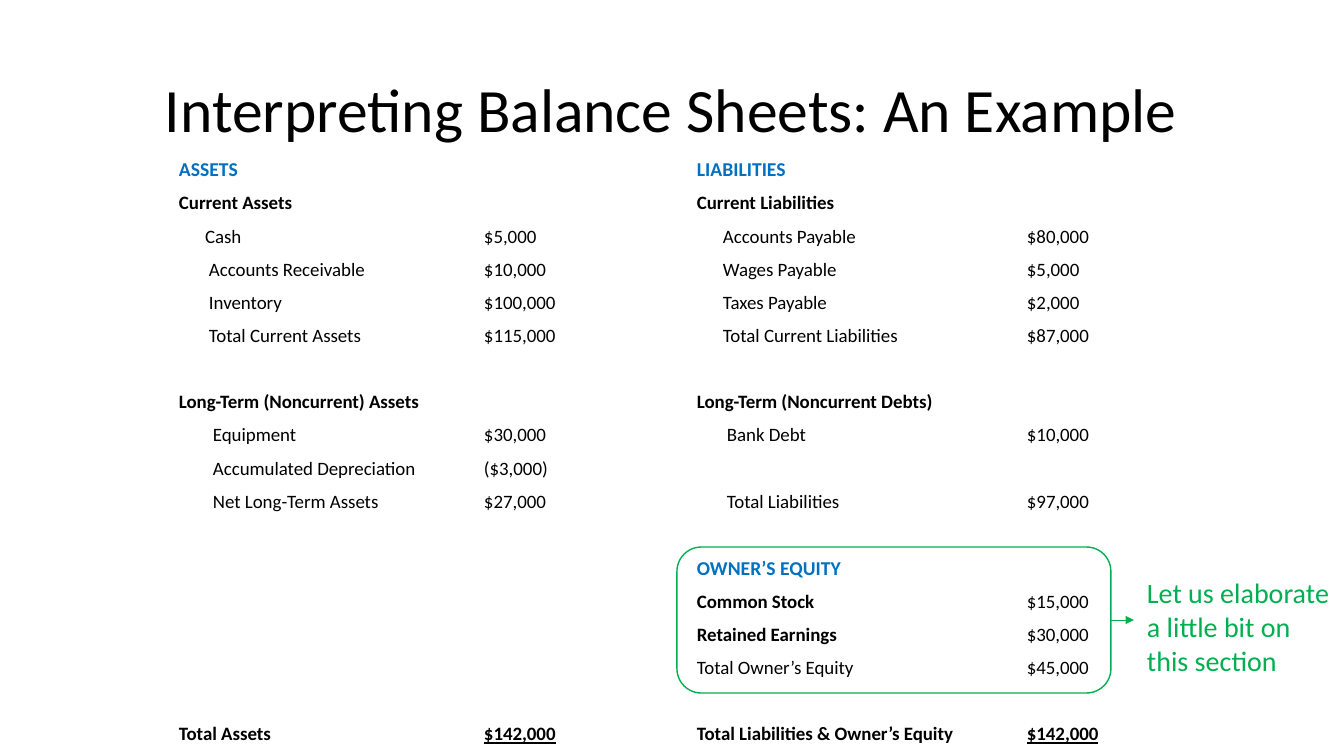
"""Build a slide that explains a balance sheet."""
from dataclasses import dataclass

from lxml import etree
from pptx import Presentation
from pptx.dml.color import RGBColor
from pptx.enum.shapes import MSO_CONNECTOR, MSO_SHAPE
from pptx.enum.text import MSO_ANCHOR, PP_ALIGN
from pptx.oxml.ns import qn
from pptx.util import Pt

STRAIGHT = MSO_CONNECTOR.STRAIGHT
ROUND = MSO_SHAPE.ROUNDED_RECTANGLE
MIDDLE = MSO_ANCHOR.MIDDLE
CENTER = PP_ALIGN.CENTER
RIGHT = 3
SCALE = 914400 / 100.8
PAD = 10


@dataclass(frozen=True)
class Theme:
    """Hold the font, colours and type sizes."""
    font: str = "Calibri"
    ink: str = "000000"
    blue: str = "0070C0"
    green: str = "00B050"
    title: float = 44
    head: float = 14
    body: float = 13.5
    note: float = 20


@dataclass(frozen=True)
class Entry:
    """Hold one line of the sheet."""
    label: str = ""
    sum: str = ""
    indent: int = 0
    head: bool = False
    bold: bool = False
    total: bool = False


def head(label):
    """Return a section heading."""
    return Entry(label, head=True, bold=True)


def group(label, sum=""):
    """Return a bold line."""
    return Entry(label, sum, bold=True)


def total(label, sum):
    """Return a closing line."""
    return Entry(label, sum, bold=True, total=True)


GAP = Entry()
ASSETS = [
    head("ASSETS"),
    group("Current Assets"),
    Entry("Cash", "$5,000", 26),
    Entry("Accounts Receivable", "$10,000", 30),
    Entry("Inventory", "$100,000", 30),
    Entry("Total Current Assets", "$115,000", 30),
    GAP,
    group("Long-Term (Noncurrent) Assets"),
    Entry("Equipment", "$30,000", 34),
    Entry("Accumulated Depreciation", "($3,000)", 34),
    Entry("Net Long-Term Assets", "$27,000", 34),
    *[GAP] * 6,
    total("Total Assets", "$142,000"),
]
CLAIMS = [
    head("LIABILITIES"),
    group("Current Liabilities"),
    Entry("Accounts Payable", "$80,000", 26),
    Entry("Wages Payable", "$5,000", 26),
    Entry("Taxes Payable", "$2,000", 26),
    Entry("Total Current Liabilities", "$87,000", 26),
    GAP,
    group("Long-Term (Noncurrent Debts)"),
    Entry("Bank Debt", "$10,000", 30),
    GAP,
    Entry("Total Liabilities", "$97,000", 30),
    GAP,
    head("OWNER’S EQUITY"),
    group("Common Stock", "$15,000"),
    group("Retained Earnings", "$30,000"),
    Entry("Total Owner’s Equity", "$45,000"),
    GAP,
    total("Total Liabilities & Owner’s Equity", "$142,000"),
]


def px(*vals):
    """Turn px lengths into EMU."""
    return [round(val * SCALE) for val in vals]


class Sheet:
    """Draw styled elements on the current slide."""

    def __init__(self, deck, theme):
        """Add a slide with a title placeholder."""
        self.theme = theme
        self.slide = deck.slides.add_slide(deck.slide_layouts[5])
        self.shapes = self.slide.shapes

    def style(self, para, size, color, bold=False):
        """Set the font of a paragraph."""
        font = para.font
        font.name, font.size, font.bold = self.theme.font, Pt(size), bold
        font.color.rgb = RGBColor.from_string(color)

    def title(self, text, box):
        """Fill and place the title."""
        shape = self.shapes.title
        shape.left, shape.top, shape.width, shape.height = px(*box)
        frame = shape.text_frame
        frame.text, frame.vertical_anchor = text, MIDDLE
        para = frame.paragraphs[0]
        para.alignment, para.line_spacing = CENTER, 0.9
        self.style(para, self.theme.title, self.theme.ink)

    def table(self, sides, spot, widths, stops, high):
        """Draw the sides as table columns."""
        count = len(sides[0])
        size = sum(widths), high * count
        grid = self.shapes.add_table(count, len(sides), *px(*spot, *size)).table
        grid.first_row = grid.horz_banding = False
        for row in grid.rows:
            row.height = px(high)[0]
        for col, (side, width, stop) in enumerate(zip(sides, widths, stops)):
            grid.columns[col].width = px(width)[0]
            for row, entry in enumerate(side):
                self.cell(grid.cell(row, col), entry, stop)

    def cell(self, cell, entry, stop):
        """Write one entry with its amount at a tab stop."""
        theme = self.theme
        cell.fill.background()
        cell.margin_left = px(PAD + entry.indent)[0]
        para = cell.text_frame.paragraphs[0]
        size = theme.head if entry.head else theme.body
        color = theme.blue if entry.head else theme.ink
        self.style(para, size, color, entry.bold)
        if not entry.label:
            end = etree.SubElement(para._p, qn("a:endParaRPr"))
            end.set("sz", str(round(size * 100)))
            return
        para.add_run().text = entry.label + ("\t" if entry.sum else "")
        if entry.sum:
            run = para.add_run()
            run.text = entry.sum
            run.font.bold = run.font.underline = entry.total
            tabs = etree.Element(qn("a:tabLst"))
            place = str(px(stop - entry.indent)[0])
            etree.SubElement(tabs, qn("a:tab"), pos=place, algn="l")
            para._p.pPr.find(qn("a:defRPr")).addprevious(tabs)

    def frame(self, box):
        """Draw a rounded outline."""
        shape = self.shapes.add_shape(ROUND, *px(*box))
        shape.shadow.inherit = False
        shape.fill.background()
        shape.line.color.rgb = RGBColor.from_string(self.theme.green)
        shape.line.width = Pt(1)
        return shape

    def arrow(self, start, ends):
        """Draw an arrow from the right side of a shape."""
        link = self.shapes.add_connector(STRAIGHT, *px(*ends))
        link.begin_connect(start, RIGHT)
        link.line.color.rgb = RGBColor.from_string(self.theme.green)
        link.line.width = Pt(0.5)
        etree.SubElement(link.line._get_or_add_ln(), qn("a:tailEnd"), type="triangle")
        etree.SubElement(link._element.spPr, qn("a:effectLst"))

    def note(self, text, box):
        """Write a side note."""
        frame = self.shapes.add_textbox(*px(*box)).text_frame
        frame.word_wrap = False
        para = frame.paragraphs[0]
        para.text = text
        self.style(para, self.theme.note, self.theme.green)


def main():
    """Build and save the deck."""
    deck = Presentation()
    deck.slide_width, deck.slide_height = px(1344, 756)
    sheet = Sheet(deck, Theme())
    sheet.title("Interpreting Balance Sheets: An Example", (92, 40, 1159, 146))
    sheet.table((ASSETS, CLAIMS), (169, 153), (518, 534), (305, 330), 33)
    equity = sheet.frame((677, 547, 434, 146))
    sheet.arrow(equity, (1111, 620, 1134, 620))
    sheet.note("Let us elaborate\na little bit on\nthis section", (1137, 571, 203, 112))
    deck.save("out.pptx")


if __name__ == "__main__":
    main()
